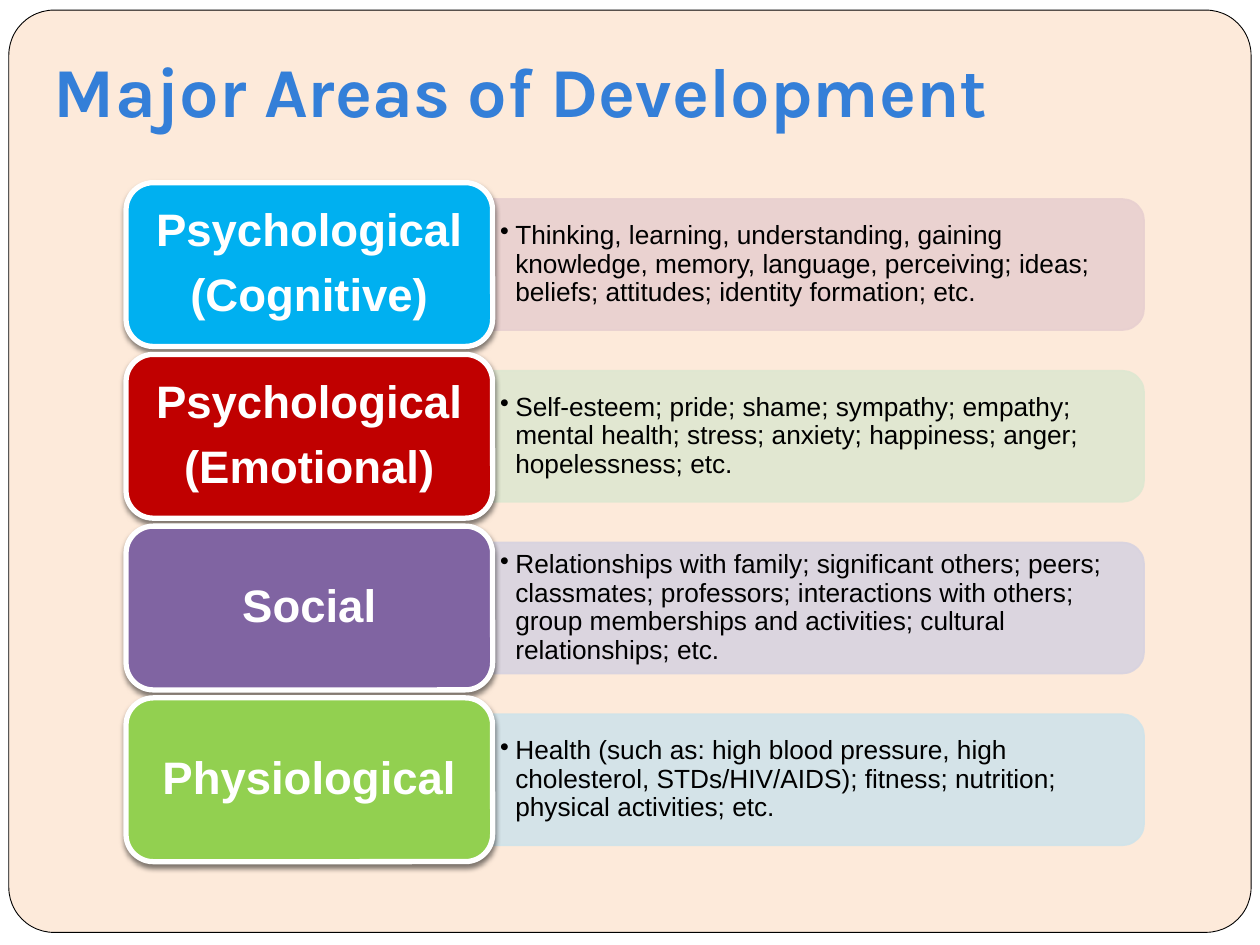
from lxml import etree
from pptx import Presentation
from pptx import util as u
from pptx.dml import color
from pptx.enum import shapes, text
from pptx.oxml import ns

TITLE = "Major Areas of Development"
# label lines, label colour, band colour, details
AREAS = [
    (["Psychological", "(Cognitive)"], "00B0F0", "E8D0D0",
     "Thinking, learning, understanding, gaining knowledge, memory, language, "
     "perceiving; ideas; beliefs; attitudes; identity formation; etc."),
    (["Psychological", "(Emotional)"], "C00000", "DEE7D1",
     "Self-esteem; pride; shame; sympathy; empathy; mental health; stress; "
     "anxiety; happiness; anger; hopelessness; etc."),
    (["Social"], "8064A2", "D8D3E0",
     "Relationships with family; significant others; peers; classmates; "
     "professors; interactions with others; group memberships and activities; "
     "cultural relationships; etc."),
    (["Physiological"], "92D050", "D0E3EA",
     "Health (such as: high blood pressure, high cholesterol, STDs/HIV/AIDS); "
     "fitness; nutrition; physical activities; etc."),
]
THEME = {
    "page": "FFFFFF", "panel": "FDEADA", "edge": "000000", "rim": "FFFFFF",
    "title": {"name": "Karla", "size": u.Pt(40), "bold": True, "rgb": "347FD8"},
    "label": {"name": "Arial", "size": u.Pt(26), "bold": True, "rgb": "FFFFFF"},
    "note": {"name": "Arial", "size": u.Pt(15), "bold": False, "rgb": "000000"},
}
WIDE, HIGH = 10, 7.5

# Grid: a label column and a band column, four equal rows
LEFT, SPLIT, RIGHT = 0.1 * WIDE, 3.91, 9.08
TOP, STEP, TALL = 1.45, 1.363, 1.3
BAND, NOTE, PAD = 1.04, 0.94, 0.065

deck = Presentation()
deck.slide_width, deck.slide_height = u.Inches(WIDE), u.Inches(HIGH)
slide = deck.slides.add_slide(deck.slide_layouts[6])


def rgb(code):
    return color.RGBColor.from_string(code)


def sub(node, tag, **vals):
    return etree.SubElement(node, ns.qn(tag), {k: str(v) for k, v in vals.items()})


def shape(kind, box, fill, line, width):
    item = slide.shapes.add_shape(kind, *map(u.Inches, box))
    item.shadow.inherit = False
    item.fill.solid()
    item.fill.fore_color.rgb = rgb(fill)
    item.line.color.rgb = rgb(line)
    item.line.width = u.Pt(width)
    return item


def write(box, lines, font, inset, anchor, form):
    item = slide.shapes.add_textbox(*map(u.Inches, box))
    frame = item.text_frame
    frame.word_wrap, frame.vertical_anchor = True, anchor
    for side, gap in zip(("left", "top", "right", "bottom"), inset):
        setattr(frame, "margin_" + side, u.Inches(gap))
    for i, line in enumerate(lines):
        para = frame.paragraphs[0] if i == 0 else frame.add_paragraph()
        for key, val in form.items():
            setattr(para, key, val)
        run = para.add_run()
        run.text = line
        for key, val in font.items():
            if key == "rgb":
                run.font.color.rgb = rgb(val)
            else:
                setattr(run.font, key, val)
    return item


def fade(item):
    for node in item._element.spPr.iter(ns.qn("a:srgbClr")):
        sub(node, "a:alpha", val=90000)


def shade(item):
    glow = item._element.spPr.find(ns.qn("a:effectLst"))
    drop = sub(glow, "a:outerShdw", blurRad=u.Pt(3), dist=u.Pt(2),
               dir=5400000, rotWithShape=0)
    sub(sub(drop, "a:srgbClr", val="000000"), "a:alpha", val=50000)


def bullet(item):
    for para in item.text_frame.paragraphs:
        prop = para._p.get_or_add_pPr()
        prop.set("marL", str(u.Inches(0.12)))
        prop.set("indent", str(-u.Inches(0.12)))
        sub(prop, "a:buChar", char="•")


# Page, panel and title
slide.background.fill.solid()
slide.background.fill.fore_color.rgb = rgb(THEME["page"])
kinds, anchors = shapes.MSO_SHAPE, text.MSO_ANCHOR
panel = shape(kinds.ROUNDED_RECTANGLE, (0.07, 0.08, 9.86, 7.32),
              THEME["panel"], THEME["edge"], 0.5)
panel.adjustments[0] = 0.049
write((0.33, 0.16, 7.92, 0.98), [TITLE], THEME["title"],
      (0.1, 0.05, 0.1, 0.1), anchors.BOTTOM, {})

# One row per area
for row, (names, hue, tint, note) in enumerate(AREAS):
    top = TOP + row * STEP
    mid = top + TALL / 2
    span = RIGHT - SPLIT

    # Band, turned so that its round corners face right
    band = shape(kinds.ROUND_2_SAME_RECTANGLE,
                 ((SPLIT + RIGHT - BAND) / 2, mid - span / 2, BAND, span),
                 tint, tint, 1)
    band.rotation = 90
    fade(band)
    bullet(write((SPLIT, mid - NOTE / 2, span - 0.05, NOTE), [note],
                 THEME["note"], (0.06, 0.03, 0.06, 0.03), anchors.MIDDLE,
                 {"line_spacing": 0.9, "space_after": u.Pt(2)}))

    # Label
    shade(shape(kinds.ROUNDED_RECTANGLE, (LEFT, top, SPLIT - LEFT, TALL),
                hue, THEME["rim"], 3))
    write((LEFT + PAD, top + PAD, SPLIT - LEFT - 2 * PAD, TALL - 2 * PAD),
          names, THEME["label"], (0.11, 0.05, 0.11, 0.05), anchors.MIDDLE,
          {"alignment": text.PP_ALIGN.CENTER, "line_spacing": 0.9,
           "space_after": u.Pt(9)})

deck.save("out.pptx")
